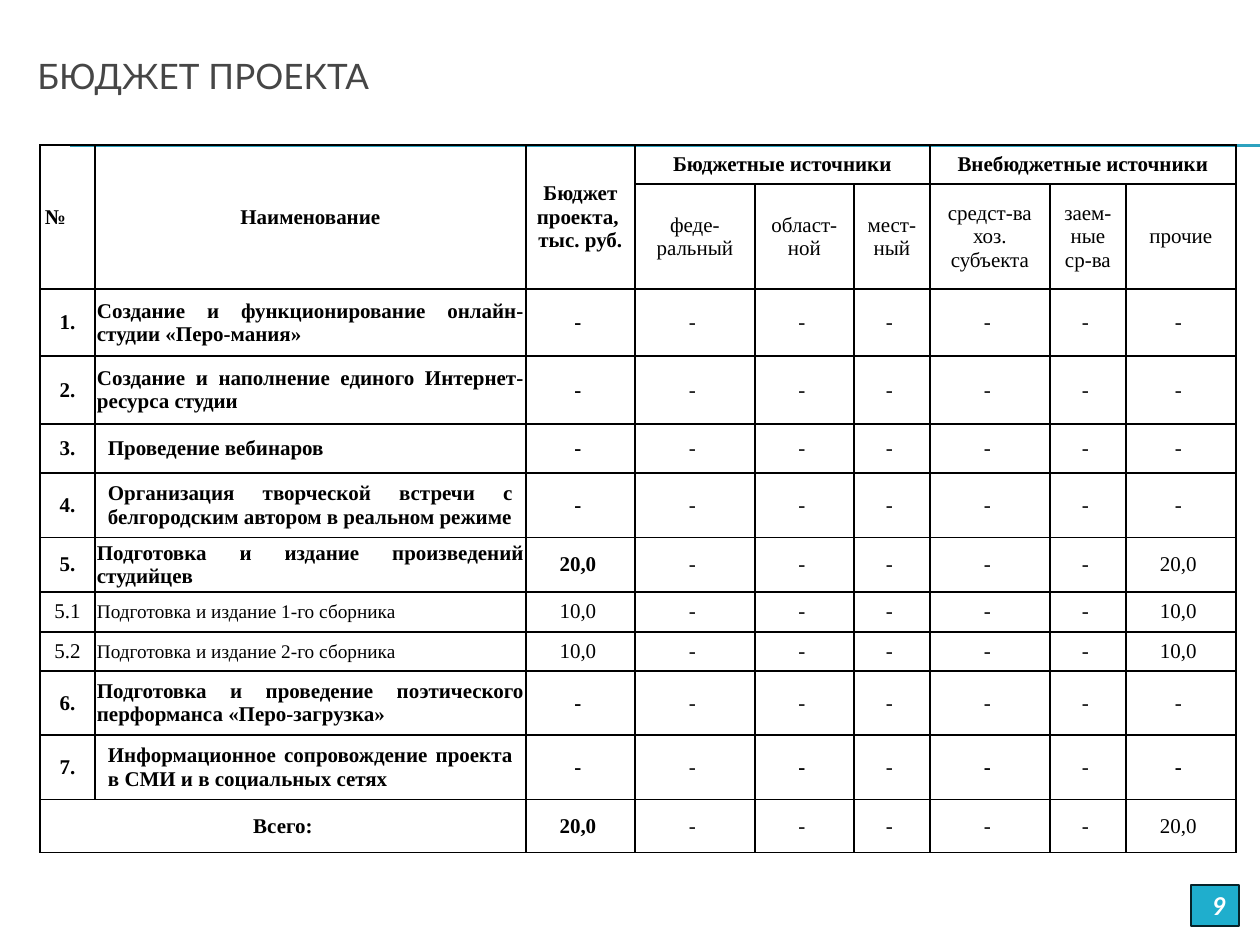
"""Builds the project budget slide."""
from lxml import etree
from pptx import Presentation
from pptx.dml.color import RGBColor
from pptx.enum.shapes import MSO_CONNECTOR, MSO_SHAPE
from pptx.enum.text import MSO_ANCHOR, PP_ALIGN
from pptx.oxml import parse_xml
from pptx.oxml.ns import nsdecls, qn
from pptx.util import Pt

LEFT, CENTER, RIGHT, JUSTIFY = PP_ALIGN.LEFT, PP_ALIGN.CENTER, PP_ALIGN.RIGHT, PP_ALIGN.JUSTIFY
MIDDLE = MSO_ANCHOR.MIDDLE
STRAIGHT = MSO_CONNECTOR.STRAIGHT
RECT = MSO_SHAPE.RECTANGLE
PX = 914400 / 126


def px(*values):
    return [round(v * PX) for v in values]


def style(tf, align, size, font, color, bold=False, italic=False):
    for p in tf.paragraphs:
        p.alignment = align
        for r in p.runs:
            r.font.size = Pt(size)
            r.font.name = font
            r.font.bold = bold
            r.font.italic = italic
            r.font.color.rgb = RGBColor.from_string(color)


prs = Presentation()
prs.slide_width, prs.slide_height = px(1260, 945)
s = prs.slides.add_slide(prs.slide_layouts[6])

for y in (145, 146):
    line = s.shapes.add_connector(STRAIGHT, *px(70, y, 1260, y))
    line.line.color.rgb = RGBColor.from_string("2DA2BF")
    line.line.width = Pt(0.75)
    etree.SubElement(line._element.spPr, qn("a:effectLst"))

title = s.shapes.add_textbox(*px(25, 37, 1134, 77))
tf = title.text_frame
tf.word_wrap = True
tf.vertical_anchor = MIDDLE
tf.text = "БЮДЖЕТ ПРОЕКТА"
style(tf, LEFT, 20, "Lato", "464646")

cols = [55, 431, 109, 120, 99, 76, 120, 76, 110]
rows = [38, 105, 67, 68, 49, 61, 51, 40, 39, 64, 64, 53]
groups = ["№", "Наименование", "Бюджет проекта, \vтыс. руб.",
          "Бюджетные источники", "", "", "Внебюджетные источники", "", ""]
sources = ["", "", "", "феде-ральный", "област- ной", "мест-ный",
           "средст-ва хоз. субъекта", "заем-ные ср-ва", "прочие"]
items = [
    ("1.", "Создание и функционирование онлайн-студии «Перо-мания»", "-"),
    ("2.", "Создание и наполнение единого Интернет-ресурса студии", "-"),
    ("3.", "Проведение вебинаров", "-"),
    ("4.", "Организация творческой встречи с белгородским автором в реальном режиме", "-"),
    ("5.", "Подготовка и издание произведений студийцев", "20,0"),
    ("5.1", "Подготовка и издание 1-го сборника", "10,0"),
    ("5.2", "Подготовка и издание 2-го сборника", "10,0"),
    ("6.", "Подготовка и проведение поэтического перформанса «Перо-загрузка»", "-"),
    ("7.", "Информационное сопровождение проекта в СМИ и в социальных сетях", "-"),
    ("Всего:", "", "20,0"),
]
grid = [groups, sources] + [[num, name, sum_, *"-----", sum_] for num, name, sum_ in items]
indented = ("3.", "4.", "7.", "Всего:")

table = s.shapes.add_table(len(rows), len(cols), *px(40, 145, sum(cols), sum(rows))).table
for col, width in zip(table.columns, px(*cols)):
    col.width = width
for row, height in zip(table.rows, px(*rows)):
    row.height = height

for i, texts in enumerate(grid):
    num = texts[0]
    sub_item = num.startswith("5.") and num != "5."
    for j, text in enumerate(texts):
        cell = table.cell(i, j)
        bold = i == 0 or i > 1 and j < 3 and not sub_item or num == "7." and j in (4, 6, 8)
        align, size, margins = CENTER, 12, (5, 7, 10, 7)
        if i < 2:
            margins = (9, 0, 9, 0) if i and j > 5 else (5, 7, 5, 7)
            if text == "№":
                align = LEFT
        elif j < 2:
            margins = (13, 7, 13, 7) if num in indented else (2, 2, 2, 2)
            if j == 1:
                align, size = JUSTIFY, 11 if sub_item else 12
        cell.margin_left, cell.margin_top, cell.margin_right, cell.margin_bottom = px(*margins)
        cell.vertical_anchor = MIDDLE
        cell.text_frame.text = text
        style(cell.text_frame, align, size, "Times New Roman", "000000", bold)
        cell.fill.background()
        for k, side in enumerate("LRTB"):
            cell._tc.get_or_add_tcPr().insert(k, parse_xml(
                f'<a:ln{side} {nsdecls("a")} w="12700"><a:solidFill>'
                f'<a:srgbClr val="000000"/></a:solidFill></a:ln{side}>'))

for top, left, bottom, right in [(0, 0, 1, 0), (0, 1, 1, 1), (0, 2, 1, 2),
                                 (0, 3, 0, 5), (0, 6, 0, 8), (11, 0, 11, 1)]:
    table.cell(top, left).merge(table.cell(bottom, right))

number = s.shapes.add_shape(RECT, *px(1191, 885, 48, 41))
number.shadow.inherit = False
number.fill.solid()
number.fill.fore_color.rgb = RGBColor.from_string("1FAECD")
number.line.color.rgb = RGBColor.from_string("062329")
number.line.width = Pt(0.75)
tf = number.text_frame
tf.vertical_anchor = MIDDLE
tf.text = "9"
style(tf, RIGHT, 14, "Lato", "FFFFFF", True, True)

prs.save("out.pptx")
